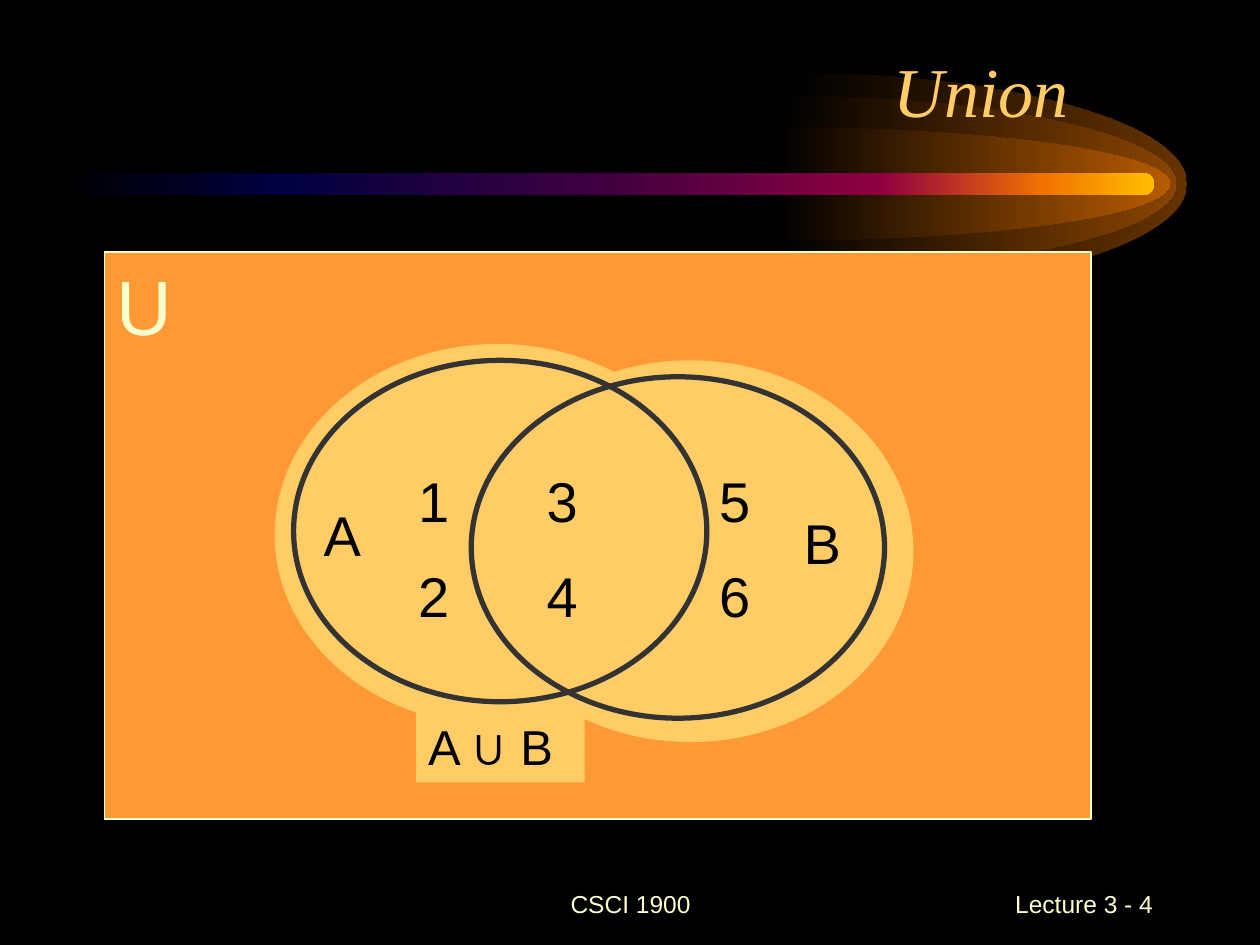
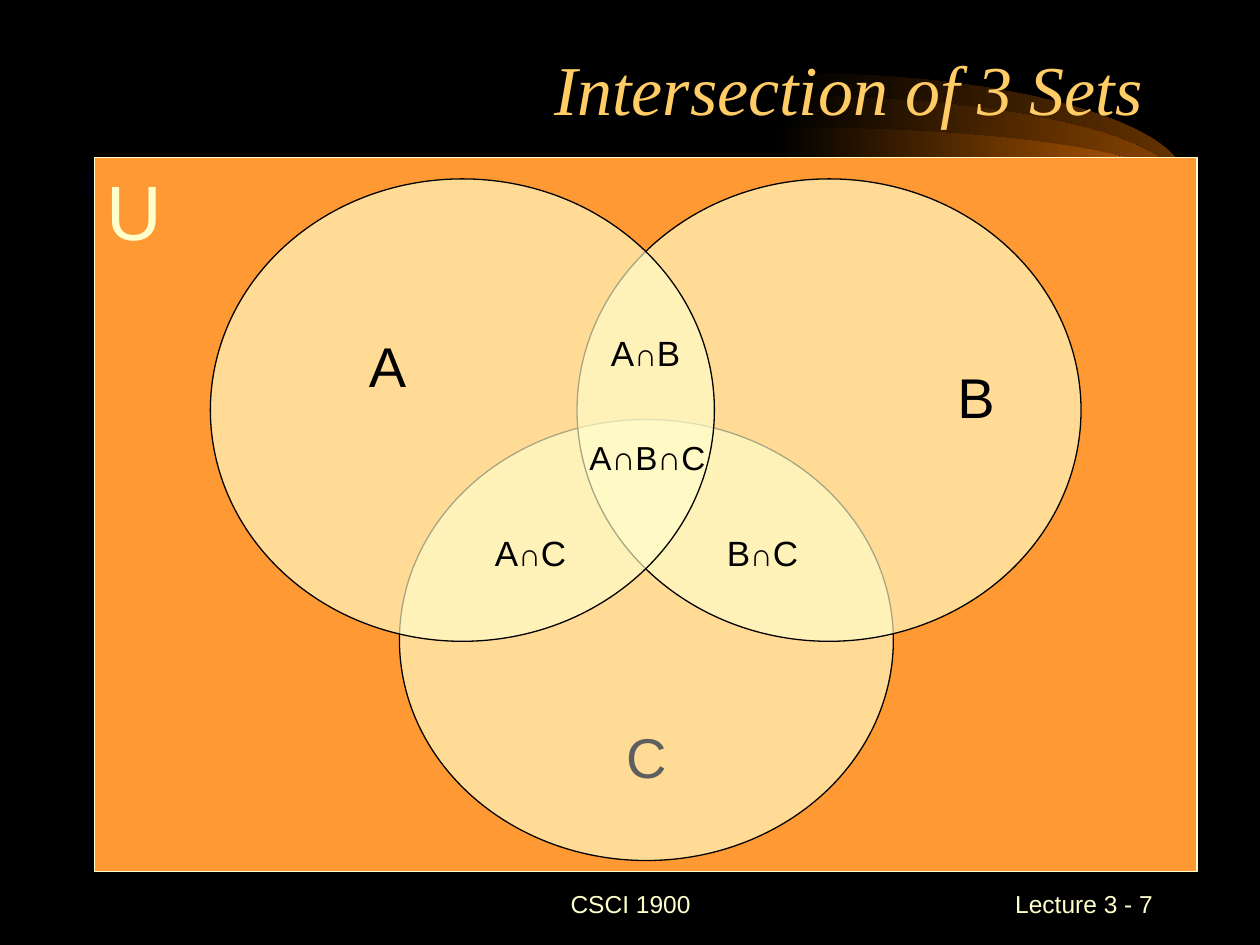
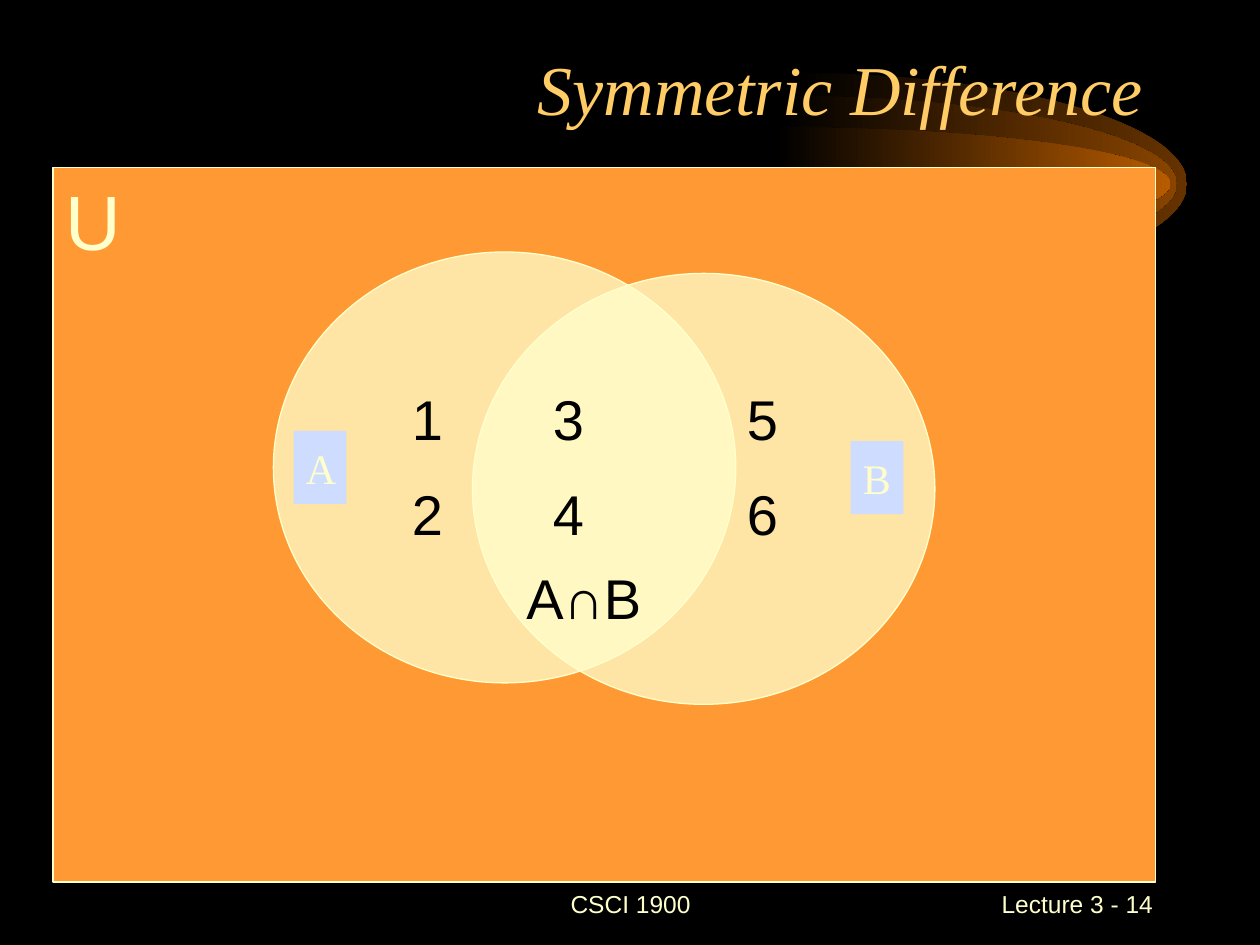
from lxml import etree
from pptx import Presentation
from pptx.dml.color import RGBColor
from pptx.enum.shapes import MSO_SHAPE as Shape
from pptx.enum.text import MSO_ANCHOR as Anchor, PP_ALIGN as Align
from pptx.oxml.ns import qn
from pptx.util import Inches, Pt

BLACK, CREAM, GOLD, ORANGE = "000000", "FFFFCC", "FFCC66", "FF9933"
CHARCOAL, GREY, PALE_BLUE = "333333", "5F5F5F", "CDDCFF"
SANS, SERIF = "Arial", "Times New Roman"


def write(shape, lines, size, color=BLACK, font=SANS, italic=False,
          align=Align.LEFT, anchor=Anchor.TOP, operator_size=None):
    """Fill a shape with lines of text; set operators may have their own size."""
    frame = shape.text_frame
    frame_format = {"word_wrap": True, "vertical_anchor": anchor,
                    "margin_left": Inches(0.1), "margin_right": Inches(0.1),
                    "margin_top": Inches(0.05), "margin_bottom": Inches(0.05)}
    for name, value in frame_format.items():
        setattr(frame, name, value)
    for index, line in enumerate(lines):
        paragraph = frame.add_paragraph() if index else frame.paragraphs[0]
        paragraph.alignment = align
        if index:
            paragraph.space_before = Pt(size / 2)
        for part in line.partition("∩") if operator_size else [line]:
            run = paragraph.add_run()
            run.text = part
            run_size = operator_size if part == "∩" else size
            run_format = {"name": font, "size": Pt(run_size), "italic": italic}
            for name, value in run_format.items():
                setattr(run.font, name, value)
            run.font.color.rgb = RGBColor.from_string(color)


def add_figure(slide, kind, box, fill=None, line=None, width=0.75, opacity=100):
    """Add a flat preset shape, or a text box when kind is None."""
    place = [Inches(length) for length in box]
    if kind is None:
        return slide.shapes.add_textbox(*place)
    figure = slide.shapes.add_shape(kind, *place)
    figure.shadow.inherit = False
    if fill:
        figure.fill.solid()
        figure.fill.fore_color.rgb = RGBColor.from_string(fill)
        if opacity < 100:
            color = figure.element.spPr.find(qn("a:solidFill"))[0]
            etree.SubElement(color, qn("a:alpha"), val=str(opacity * 1000))
    else:
        figure.fill.background()
    if line:
        figure.line.color.rgb = RGBColor.from_string(line)
        figure.line.width = Pt(width)
    else:
        figure.line.fill.background()
    return figure


prs = Presentation()
prs.slide_width, prs.slide_height = Inches(10), Inches(7.5)
layout = prs.slide_layouts[5]
layout.background.fill.solid()
layout.background.fill.fore_color.rgb = RGBColor.from_string(BLACK)

# Titles, footers and the universe of each slide
slides = []
for title, number, title_box, universe_box in [
    ("Union", 4, (0.58, 0.17, 8, 0.92), (0.83, 2, 7.83, 4.5)),
    ("Intersection of 3 Sets", 7, (0.67, 0.25, 8.5, 0.83), (0.75, 1.25, 8.75, 5.67)),
    ("Symmetric Difference", 14, (0.67, 0.25, 8.5, 0.83), (0.42, 1.33, 8.75, 5.67)),
]:
    slide = prs.slides.add_slide(layout)
    slides.append(slide)
    heading = slide.shapes.title
    for side, length in zip(("left", "top", "width", "height"), title_box):
        setattr(heading, side, Inches(length))
    write(heading, [title], 40, GOLD, SERIF, True, Align.RIGHT, Anchor.BOTTOM)
    for text, box, align in [
        ("CSCI 1900", (3.42, 6.92, 3.17, 0.5), Align.CENTER),
        (f"Lecture 3 - {number}", (7.17, 6.92, 2.08, 0.5), Align.RIGHT),
    ]:
        footer = add_figure(slide, None, box)
        write(footer, [text], 14, CREAM, align=align, anchor=Anchor.MIDDLE)
    universe = add_figure(slide, Shape.RECTANGLE, universe_box, ORANGE, CREAM)
    write(universe, ["U"], 44, CREAM)
union, intersection, difference = slides

# Comet behind every title: three glowing halves of ellipses and a tail
comet = []
middle, reach, bend = 1.46, 3.13, 0.55
for left, rise, glow in [(6.29, 0.88, "663300"), (6.21, 0.7, "894400"),
                         (6.16, 0.45, "B75B00")]:
    outline = [(Inches(left + reach * across), Inches(middle + rise * down))
               for across, down in [(0, -1), (bend, -1), (1, -bend), (1, 0),
                                    (1, bend), (bend, 1), (0, 1)]]
    builder = union.shapes.build_freeform(*outline[0])
    builder.add_line_segments(outline[1:], close=True)
    halo = builder.convert_to_shape()
    # Every three straight segments become one Bézier curve
    segments = list(halo.element.iter(qn("a:lnTo")))
    for start in (0, 3):
        curve = etree.Element(qn("a:cubicBezTo"))
        segments[start].addprevious(curve)
        for segment in segments[start:start + 3]:
            curve.append(segment[0])
            segment.getparent().remove(segment)
    comet.append((halo, [(0, BLACK), (100, glow)]))
tail = add_figure(union, Shape.ROUNDED_RECTANGLE, (0.5, 1.37, 8.66, 0.18))
tail.adjustments[0] = 0.5
comet.append((tail, [(0, BLACK), (20, "000040"), (50, "400040"),
                     (75, "8F0040"), (90, "F27300"), (100, "FFBF00")]))
for piece, stops in comet:
    piece.shadow.inherit = False
    piece.line.fill.background()
    piece.fill.gradient()
    piece.fill.gradient_angle = 0
    stop_list = piece.element.spPr.find(".//" + qn("a:gsLst"))
    stop_list.clear()
    for position, color in stops:
        stop = etree.SubElement(stop_list, qn("a:gs"), pos=str(position * 1000))
        etree.SubElement(stop, qn("a:srgbClr"), val=color)
    layout.shapes.element.append(piece.element)

# Union: golden area under the two outlined sets
for left, top in [(3.71, 2.86), (2.18, 2.73)]:
    add_figure(union, Shape.OVAL, (left, top, 3.54, 3.03), GOLD)
union_name = add_figure(union, Shape.RECTANGLE, (3.3, 5.64, 1.34, 0.57), GOLD)
write(union_name, ["A ∪ B"], 28)
for left, top in [(2.33, 2.86), (3.74, 2.99)]:
    add_figure(union, Shape.OVAL, (left, top, 3.28, 2.71), line=CHARCOAL, width=3)

# Intersection of 3 sets: translucent circles
for name, box in [("C", (3.17, 3.33, 3.92, 3.5)), (None, (4.58, 1.42, 4, 3.67)),
                  (None, (1.67, 1.42, 4, 3.67))]:
    circle = add_figure(intersection, Shape.OVAL, box, CREAM, BLACK, opacity=65)
    if name:
        write(circle, [name], 32, GREY, align=Align.CENTER, anchor=Anchor.BOTTOM)

# Symmetric difference: translucent circles with name tags
for left, top in [(3.75, 2.17), (2.17, 2)]:
    add_figure(difference, Shape.OVAL, (left, top, 3.67, 3.42), CREAM, CREAM, opacity=75)
for name, left, top in [("B", 6.75, 3.5), ("A", 2.33, 3.42)]:
    tag = add_figure(difference, Shape.RECTANGLE, (left, top, 0.42, 0.58), PALE_BLUE)
    write(tag, [name], 24, CREAM, SERIF, align=Align.CENTER, anchor=Anchor.MIDDLE)

# Set names and elements
for slide, lines, box, size, operator_size in [
    (union, ["A"], (2.47, 3.92, 0.5, 0.63), 32, None),
    (union, ["B"], (6.28, 3.99, 0.45, 0.63), 32, None),
    (union, ["1", "2"], (3.22, 3.65, 0.9, 1.43), 32, None),
    (union, ["3", "4"], (4.24, 3.65, 0.9, 1.43), 32, None),
    (union, ["5", "6"], (5.61, 3.65, 0.9, 1.43), 32, None),
    (intersection, ["A"], (2.83, 2.58, 0.5, 0.63), 32, None),
    (intersection, ["B"], (7.5, 2.83, 0.5, 0.63), 32, None),
    (intersection, ["A∩B∩C"], (4.58, 3.42, 1.17, 0.42), 19, None),
    (intersection, ["B∩C"], (5.67, 4.17, 0.83, 0.43), 20, 18),
    (intersection, ["A∩C"], (3.83, 4.17, 0.83, 0.43), 20, 18),
    (intersection, ["A∩B"], (4.75, 2.58, 0.83, 0.43), 20, 18),
    (difference, ["1", "2"], (3.17, 3, 1, 1.43), 32, None),
    (difference, ["3", "4"], (4.29, 3, 1, 1.43), 32, None),
    (difference, ["5", "6"], (5.83, 3, 1, 1.43), 32, None),
    (difference, ["A∩B"], (4.08, 4.42, 1.33, 0.63), 32, None),
]:
    label = add_figure(slide, None, box)
    write(label, lines, size, operator_size=operator_size)

prs.save("out.pptx")
